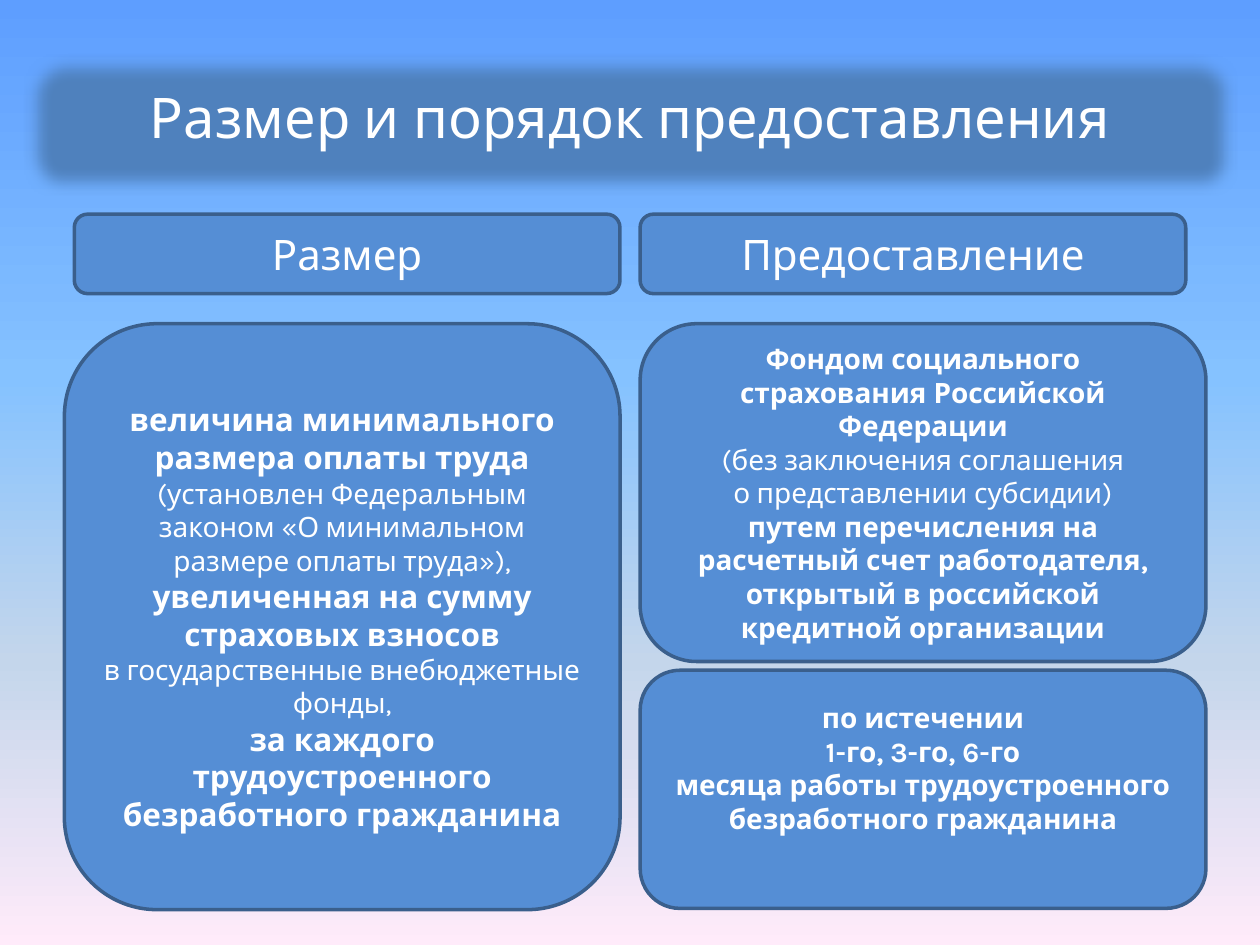
from lxml.etree import SubElement
from pptx import Presentation
from pptx.dml.color import RGBColor
from pptx.enum.shapes import MSO_SHAPE
from pptx.enum.text import MSO_ANCHOR, PP_ALIGN
from pptx.oxml.ns import qn
from pptx.util import Pt

WHITE = RGBColor(0xFF, 0xFF, 0xFF)
BANNER = RGBColor(0x4F, 0x81, 0xBD)
PANEL = RGBColor(0x55, 0x8E, 0xD5)
OUTLINE = RGBColor(0x3A, 0x5F, 0x8C)
SKY = [
    (0, RGBColor(0x5E, 0x9E, 0xFF)),
    (40, RGBColor(0x85, 0xC2, 0xFF)),
    (70, RGBColor(0xC4, 0xD6, 0xEB)),
    (100, RGBColor(0xFF, 0xEB, 0xFA)),
]

HEADINGS = [("Размер", 42.5), ("Предоставление", 365.8)]
AMOUNT = [
    ("величина минимального размера оплаты труда", 18, True),
    ("(установлен Федеральным законом «О минимальном размере оплаты труда»),", 16, False),
    ("увеличенная на сумму страховых взносов", 18, True),
    ("в государственные внебюджетные фонды,", 16, False),
    ("за каждого трудоустроенного безработного гражданина", 18, True),
]
PROVIDER = [
    ("Фондом социального страхования Российской Федерации", 16, True),
    ("(без заключения соглашения", 16, False),
    ("о представлении субсидии)", 16, False),
    ("путем перечисления на расчетный счет работодателя, "
     "открытый в российской кредитной организации", 16, True),
]
TERMS = [
    ("по истечении\v1-го, 3-го, 6-го\v"
     "месяца работы трудоустроенного безработного гражданина", 16, True),
]


class SlideBuilder:
    """Hold the slide and its style and add each kind of element."""

    def __init__(self, s, font="Karla", line_width=2):
        self.s = s
        self.font = font
        self.line_width = line_width

    def background(self, stops):
        fill = self.s.background.fill
        fill.gradient()
        fill.gradient_angle = 270
        gs_list = self.s.element.find(".//" + qn("a:gsLst"))
        for gs in list(gs_list):
            gs_list.remove(gs)
        for percent, color in stops:
            gs = SubElement(gs_list, qn("a:gs"), pos=str(percent * 1000))
            SubElement(gs, qn("a:srgbClr"), val=str(color))

    def text(self, tf, paragraphs):
        tf.word_wrap = True
        tf.vertical_anchor = MSO_ANCHOR.MIDDLE
        for i, (text, size, bold) in enumerate(paragraphs):
            p = tf.add_paragraph() if i else tf.paragraphs[0]
            p.text = text
            p.alignment = PP_ALIGN.CENTER
            p.font.name = self.font
            p.font.size = Pt(size)
            p.font.bold = bold
            p.font.color.rgb = WHITE

    def title(self, text, left, top, width, height):
        sp = self.s.shapes.title
        sp.left, sp.top, sp.width, sp.height = Pt(left), Pt(top), Pt(width), Pt(height)
        self.text(sp.text_frame, [(text, 32, False)])

    def panel(self, left, top, width, height, paragraphs=(), color=PANEL):
        sp = self.s.shapes.add_shape(
            MSO_SHAPE.ROUNDED_RECTANGLE, Pt(left), Pt(top), Pt(width), Pt(height))
        sp.shadow.inherit = False
        sp.fill.solid()
        sp.fill.fore_color.rgb = color
        sp.line.color.rgb = OUTLINE
        sp.line.width = Pt(self.line_width)
        self.text(sp.text_frame, paragraphs)
        return sp

    def banner(self, left, top, width, height, soft_edge):
        sp = self.panel(left, top, width, height, color=BANNER)
        effects = sp.element.spPr.find(qn("a:effectLst"))
        SubElement(effects, qn("a:softEdge"), rad=str(Pt(soft_edge)))
        self.s.shapes.title.element.addprevious(sp.element)


def main():
    prs = Presentation()
    prs.slide_width, prs.slide_height = Pt(720), Pt(540)
    b = SlideBuilder(prs.slides.add_slide(prs.slide_layouts[5]))
    b.background(SKY)
    b.banner(14.4, 31.7, 692, 79.2, soft_edge=9)
    b.title("Размер и порядок предоставления", 36, 21.6, 648, 90)
    for text, left in HEADINGS:
        b.panel(left, 122.4, 311.8, 45.4, [(text, 24, False)])
    b.panel(36.8, 185, 317.5, 334.8, AMOUNT)
    terms = b.panel(365.8, 383, 323.3, 136.1, TERMS)
    terms.text_frame.margin_bottom = Pt(28)
    b.panel(365.8, 185, 323.3, 193, PROVIDER)
    prs.save("out.pptx")


if __name__ == "__main__":
    main()
